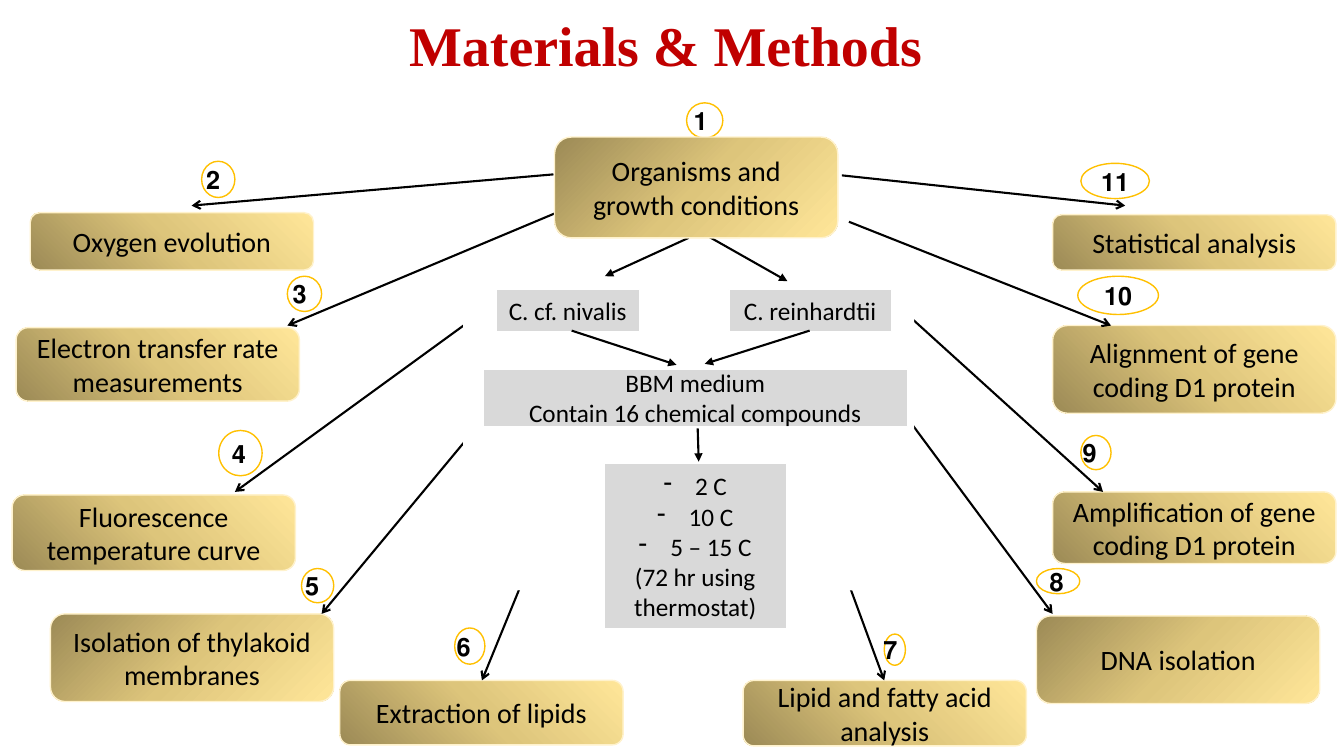
"""Build the Materials & Methods slide: a hub of growth conditions with ten numbered steps."""
from typing import NamedTuple, Optional

from lxml.etree import SubElement
from pptx import Presentation
from pptx.dml.color import RGBColor
from pptx.enum.shapes import MSO_CONNECTOR, MSO_SHAPE
from pptx.enum.text import MSO_ANCHOR, PP_ALIGN
from pptx.oxml import parse_xml
from pptx.oxml.ns import nsdecls, qn
from pptx.util import Pt

PX = 9144
STEP_WIDTH = 281
FONT = "Calibri"
COLORS = {
    "title": "C00000",
    "text": "000000",
    "white": "FFFFFF",
    "badge": "FFC000",
    "grey": "D9D9D9",
    "edge": "FFF2CC",
    "gold_dark": "9C8A56",
    "gold_mid": "DDC57B",
    "gold_light": "FFE699",
}
DIAGONAL = '<a:lin ang="2700000" scaled="1"/>'
RADIAL = '<a:path path="circle"><a:fillToRect t="100000" r="100000"/></a:path>'


class Box(NamedTuple):
    x: int
    y: int
    w: int
    h: int


class Arrow(NamedTuple):
    x1: int
    y1: int
    x2: int
    y2: int


class Step(NamedTuple):
    label: str
    x: int
    y: int
    h: int
    badge: Box
    arrow: Optional[Arrow] = None
    shade: str = RADIAL


class Note(NamedTuple):
    text: str
    box: Box
    bullets: int = 0


HUB = Step("Organisms and growth conditions", 550, 136, 100, Box(681, 102, 36, 35), shade=DIAGONAL)
STEPS = [
    Step("Oxygen evolution", 30, 211, 57, Box(200, 160, 33, 36), Arrow(549, 173, 190, 204)),
    Step("Electron transfer rate measurements", 16, 325, 73, Box(285, 274, 34, 35),
         Arrow(552, 211, 285, 323)),
    Step("Fluorescence temperature curve", 12, 491, 75, Box(217, 427, 43, 45),
         Arrow(593, 226, 233, 488)),
    Step("Isolation of thylakoid membranes", 50, 609, 87, Box(299, 564, 32, 34),
         Arrow(637, 226, 319, 609), DIAGONAL),
    Step("Extraction of lipids", 337, 675, 64, Box(451, 623, 30, 36), Arrow(663, 223, 478, 675)),
    Step("Lipid and fatty acid analysis", 737, 675, 65, Box(877, 629, 21, 31),
         Arrow(712, 226, 877, 675)),
    Step("DNA isolation", 1028, 611, 87, Box(1028, 564, 43, 25),
         Arrow(760, 226, 1044, 609), DIAGONAL),
    Step("Amplification of gene coding D1 protein", 1044, 488, 71, Box(1072, 432, 30, 34),
         Arrow(805, 226, 1094, 488)),
    Step("Alignment of gene coding D1 protein", 1044, 323, 87, Box(1069, 274, 80, 38),
         Arrow(842, 220, 1102, 323)),
    Step("Statistical analysis", 1044, 213, 55, Box(1072, 162, 68, 35),
         Arrow(835, 174, 1116, 204)),
]
PANEL = Box(460, 236, 446, 349)
NOTES = [
    Note("C. cf. nivalis", Box(492, 287, 142, 42)),
    Note("C. reinhardtii", Box(723, 287, 161, 42)),
    Note("BBM medium\nContain 16 chemical compounds", Box(479, 366, 421, 57)),
    Note("2 C\n10 C\n5 – 15 C\n(72 hr using thermostat)", Box(599, 460, 181, 164), bullets=3),
]
FLOW = [
    Arrow(683, 236, 600, 274),
    Arrow(691, 228, 781, 279),
    Arrow(803, 328, 699, 361),
    Arrow(567, 328, 671, 362),
    Arrow(692, 425, 693, 458),
]


def color(name: str) -> RGBColor:
    return RGBColor.from_string(COLORS[name])


def emu(lengths: tuple) -> list:
    return [n * PX for n in lengths]


def add_box(s, kind, box: Box, line: str, fill: str = "white"):
    sp = s.shapes.add_shape(kind, *emu(box))
    sp.shadow.inherit = False
    sp.fill.solid()
    sp.fill.fore_color.rgb = color(fill)
    sp.line.color.rgb = color(line)
    sp.line.width = Pt(1)
    return sp


def set_text(sp, text: str, size: int, bold: bool = False) -> None:
    tf = sp.text_frame
    tf.text = text
    tf.vertical_anchor = MSO_ANCHOR.MIDDLE
    for p in tf.paragraphs:
        p.alignment = PP_ALIGN.CENTER
        for r in p.runs:
            r.font.name = FONT
            r.font.size = Pt(size)
            r.font.bold = bold
            r.font.color.rgb = color("text")


def shade_gold(sp, direction: str) -> None:
    stops = "".join(
        f'<a:gs pos="{pos}"><a:srgbClr val="{COLORS[name]}"/></a:gs>'
        for pos, name in ((0, "gold_dark"), (50000, "gold_mid"), (100000, "gold_light"))
    )
    solid = sp._element.spPr.find(qn("a:solidFill"))
    solid.getparent().replace(solid, parse_xml(
        f'<a:gradFill {nsdecls("a")} rotWithShape="1"><a:gsLst>{stops}</a:gsLst>{direction}</a:gradFill>'
    ))


def add_arrow(s, arrow: Arrow, head: str) -> None:
    c = s.shapes.add_connector(MSO_CONNECTOR.STRAIGHT, *emu(arrow))
    c.line.color.rgb = color("text")
    c.line.width = Pt(1.5)
    SubElement(c.line._get_or_add_ln(), qn("a:tailEnd"), type=head)
    SubElement(c._element.spPr, qn("a:effectLst"))


def add_step(s, step: Step) -> None:
    box = Box(step.x, step.y, STEP_WIDTH, step.h)
    sp = add_box(s, MSO_SHAPE.ROUNDED_RECTANGLE, box, "edge")
    shade_gold(sp, step.shade)
    set_text(sp, step.label, 20)


def add_badge(s, number: int, box: Box) -> None:
    sp = add_box(s, MSO_SHAPE.OVAL, box, "badge")
    set_text(sp, str(number), 18, bold=True)
    sp.text_frame.paragraphs[0]._p.get_or_add_pPr().set("rtl", "1")


def add_note(s, note: Note) -> None:
    sp = add_box(s, MSO_SHAPE.RECTANGLE, note.box, "white", "grey")
    set_text(sp, note.text, 18)
    for p in sp.text_frame.paragraphs[:note.bullets]:
        pPr = p._p.get_or_add_pPr()
        pPr.set("marL", "285750")
        pPr.set("indent", "-285750")
        SubElement(pPr, qn("a:buChar"), char="-")


def add_title(s, text: str) -> None:
    tf = s.shapes.add_textbox(*emu(Box(396, 6, 534, 77))).text_frame
    tf.text = text
    tf.word_wrap = False
    r = tf.paragraphs[0].runs[0]
    r.font.name = "Times New Roman"
    r.font.size = Pt(40)
    r.font.bold = True
    r.font.color.rgb = color("title")


def main() -> None:
    prs = Presentation()
    prs.slide_width, prs.slide_height = emu((1333, 750))
    s = prs.slides.add_slide(prs.slide_layouts[6])
    add_title(s, "Materials & Methods")
    for step in STEPS:
        add_step(s, step)
        add_arrow(s, step.arrow, "arrow")
    for number, step in enumerate([HUB, *STEPS], 1):
        add_badge(s, number, step.badge)
    add_box(s, MSO_SHAPE.ROUNDED_RECTANGLE, PANEL, "white")
    for note in NOTES:
        add_note(s, note)
    for arrow in FLOW:
        add_arrow(s, arrow, "triangle")
    add_step(s, HUB)
    prs.save("out.pptx")


if __name__ == "__main__":
    main()
